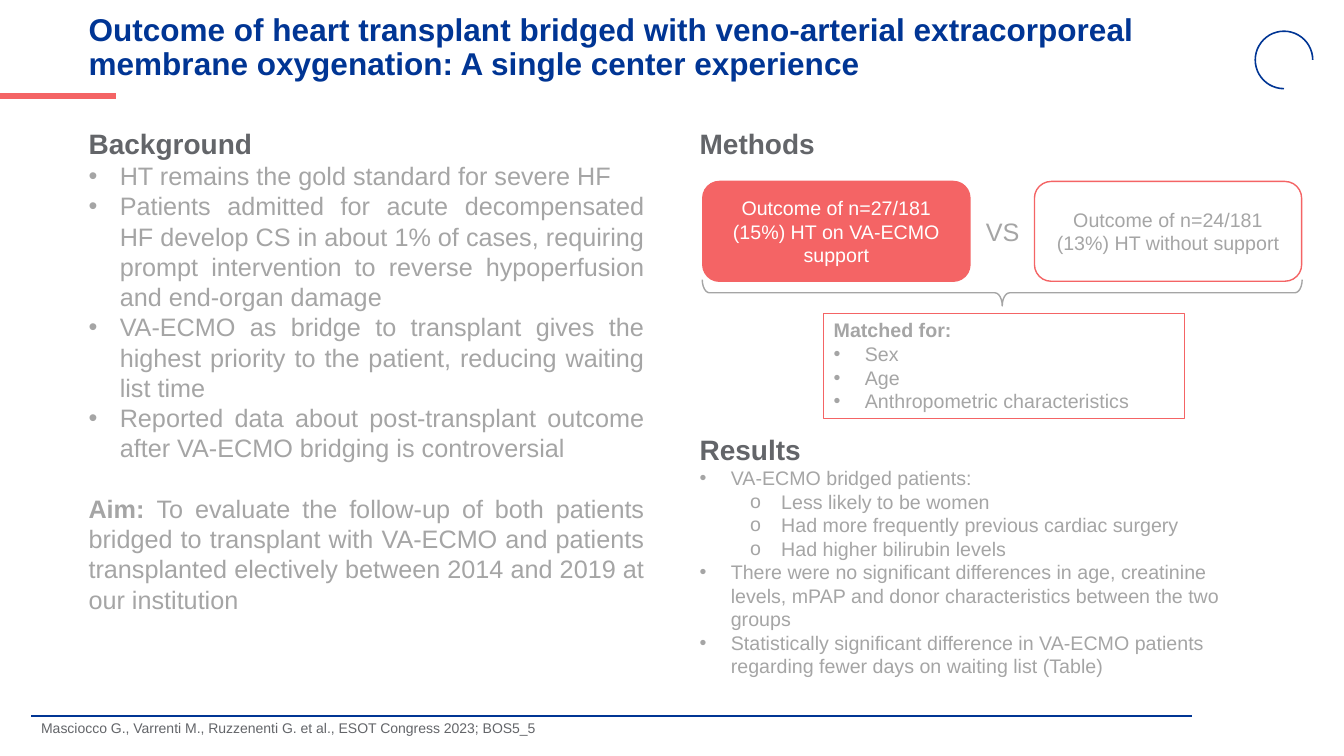
from lxml import etree
from pptx import Presentation
from pptx.dml.color import RGBColor
from pptx.enum.shapes import MSO_CONNECTOR, MSO_SHAPE
from pptx.enum.text import MSO_ANCHOR, PP_ALIGN
from pptx.oxml.ns import qn
from pptx.util import Inches, Pt

LEFT, CENTER, JUSTIFY = PP_ALIGN.LEFT, PP_ALIGN.CENTER, PP_ALIGN.JUSTIFY
TOP, MIDDLE = MSO_ANCHOR.TOP, MSO_ANCHOR.MIDDLE
STRAIGHT = MSO_CONNECTOR.STRAIGHT
ARC, BRACE = MSO_SHAPE.ARC, MSO_SHAPE.RIGHT_BRACE
ROUNDED, RECTANGLE = MSO_SHAPE.ROUNDED_RECTANGLE, MSO_SHAPE.RECTANGLE

COLORS = {"navy": "003594", "coral": "F46465", "dark": "636569",
          "gray": "A5A5A5", "white": "FFFFFF"}

TITLE = ("Outcome of heart transplant bridged with veno-arterial extracorporeal "
         "membrane oxygenation: A single center experience")
CITATION = "Masciocco G., Varrenti M., Ruzzenenti G. et al., ESOT Congress 2023; BOS5_5"
BACKGROUND = [
    "HT remains the gold standard for severe HF",
    "Patients admitted for acute decompensated HF develop CS in about 1% of cases, "
    "requiring prompt intervention to reverse hypoperfusion and end-organ damage",
    "VA-ECMO as bridge to transplant gives the highest priority to the patient, "
    "reducing waiting list time",
    "Reported data about post-transplant outcome after VA-ECMO bridging is controversial",
]
AIM = ("Aim: ", "To evaluate the follow-up of both patients bridged to transplant with "
       "VA-ECMO and patients transplanted electively between 2014 and 2019 at our institution")
GROUPS = [
    ("Outcome of n=27/181 (15%) HT on VA-ECMO support", "coral", "white"),
    ("Outcome of n=24/181 (13%) HT without support", None, "gray"),
]
MATCHED = ["Sex", "Age", "Anthropometric characteristics"]
RESULTS = [
    (0, "VA-ECMO bridged patients:"),
    (1, "Less likely to be women"),
    (1, "Had more frequently previous cardiac surgery"),
    (1, "Had higher bilirubin levels"),
    (0, "There were no significant differences in age, creatinine levels, mPAP and donor "
        "characteristics between the two groups"),
    (0, "Statistically significant difference in VA-ECMO patients regarding fewer days on "
        "waiting list (Table)"),
]

WIDTH, HEIGHT = 13.33, 7.5
LEFT_COLUMN, RIGHT_COLUMN, COLUMN_WIDTH = 0.78, 6.84, 5.71
FIRST_ROW, GROUP_ROW, MATCHED_ROW, RESULTS_ROW = 1.21, 1.8, 3.11, 4.24
GROUP_LEFT, GROUP_WIDTH, GROUP_HEIGHT, GROUP_GAP = 6.97, 2.65, 0.99, 0.64
FOOTER_LEFT, FOOTER_ROW = 0.31, 7.1
INDENT, NESTED = 0.31, 0.5

presentation = Presentation()
presentation.slide_width, presentation.slide_height = Inches(WIDTH), Inches(HEIGHT)
slide = presentation.slides.add_slide(presentation.slide_layouts[6])


def rgb(name):
    return RGBColor.from_string(COLORS[name])


def set_frame(shape, anchor=TOP):
    frame = shape.text_frame
    frame.word_wrap = True
    frame.vertical_anchor = anchor
    return frame


def add_box(left, top, width, height, anchor=TOP):
    box = slide.shapes.add_textbox(Inches(left), Inches(top), Inches(width), Inches(height))
    return set_frame(box, anchor)


def add_outline(kind, left, top, width, height, color, weight, fill=None):
    shape = slide.shapes.add_shape(kind, Inches(left), Inches(top), Inches(width), Inches(height))
    shape.shadow.inherit = False
    if fill:
        shape.fill.solid()
        shape.fill.fore_color.rgb = rgb(fill)
    else:
        shape.fill.background()
    shape.line.color.rgb = rgb(color)
    shape.line.width = Pt(weight)
    return shape


def add_rule(start, end, top, color, weight):
    rule = slide.shapes.add_connector(STRAIGHT, Inches(start), Inches(top), Inches(end), Inches(top))
    rule.line.color.rgb = rgb(color)
    rule.line.width = Pt(weight)
    etree.SubElement(rule._element.spPr, qn("a:effectLst"))


def write(frame, text, size=14, color="gray", bold=False, align=LEFT, level=None,
          lead="", spacing=None, before=None):
    paragraph = frame.paragraphs[0]
    if paragraph.runs:
        paragraph = frame.add_paragraph()
    paragraph.alignment = align
    if spacing:
        paragraph.line_spacing = spacing
    if before:
        paragraph.space_before = Pt(before)
    if level is not None:
        paragraph.level = level
        properties = paragraph._p.get_or_add_pPr()
        properties.set("marL", str(Inches(INDENT + NESTED * level)))
        properties.set("indent", str(-Inches(INDENT)))
        etree.SubElement(properties, qn("a:buFont"), typeface="Arial")
        etree.SubElement(properties, qn("a:buChar"), char="•o"[level])
    for part, heavy in ((lead, True), (text, bold)):
        if part:
            run = paragraph.add_run()
            run.text = part
            run.font.name = "Arial"
            run.font.size = Pt(size)
            run.font.bold = heavy
            run.font.color.rgb = rgb(color)


def add_section(heading, left, top, height):
    frame = add_box(left, top, COLUMN_WIDTH, height)
    write(frame, heading, size=20, color="dark", bold=True)
    return frame


add_rule(0, 1.15, 0.95, "coral", 4.5)
add_rule(FOOTER_LEFT, 11.82, FOOTER_ROW, "navy", 1.5)
write(add_box(LEFT_COLUMN, 0.17, 11.5, 0.61, MIDDLE), TITLE,
      size=22.5, color="navy", bold=True, spacing=0.9)
write(add_box(FOOTER_LEFT, FOOTER_ROW + 0.01, 7.84, 0.34), CITATION,
      size=10, color="dark", spacing=0.9)

background = add_section("Background", LEFT_COLUMN, FIRST_ROW, 4.98)
for point in BACKGROUND:
    write(background, point, size=18, align=JUSTIFY, level=0)
write(background, AIM[1], size=18, align=JUSTIFY, lead=AIM[0], before=21.6)

add_section("Methods", RIGHT_COLUMN, FIRST_ROW, 0.44)
for index, (label, fill, color) in enumerate(GROUPS):
    left = GROUP_LEFT + index * (GROUP_WIDTH + GROUP_GAP)
    group = add_outline(ROUNDED, left, GROUP_ROW, GROUP_WIDTH, GROUP_HEIGHT, "coral", 1, fill)
    write(set_frame(group, MIDDLE), label, color=color, align=CENTER)
write(add_box(9.68, 2.1, 0.56, 0.4), "VS", size=18)

matched = set_frame(add_outline(RECTANGLE, 8.17, MATCHED_ROW, 3.58, 1.04, "coral", 0.75))
write(matched, "Matched for:", bold=True)
for trait in MATCHED:
    write(matched, trait, level=0)

brace = add_outline(BRACE, 9.81, -0.07, 0.26, 5.95, "gray", 1)
brace.rotation = 90
brace.adjustments[0], brace.adjustments[1] = 0.28, 0.5

results = add_section("Results", RIGHT_COLUMN, RESULTS_ROW, 2.56)
for level, finding in RESULTS:
    write(results, finding, level=level)

ring = add_outline(ARC, 12.45, 0.31, 0.57, 0.57, "navy", 1.13)
ring.adjustments[0], ring.adjustments[1] = 54, 0

presentation.save("out.pptx")
